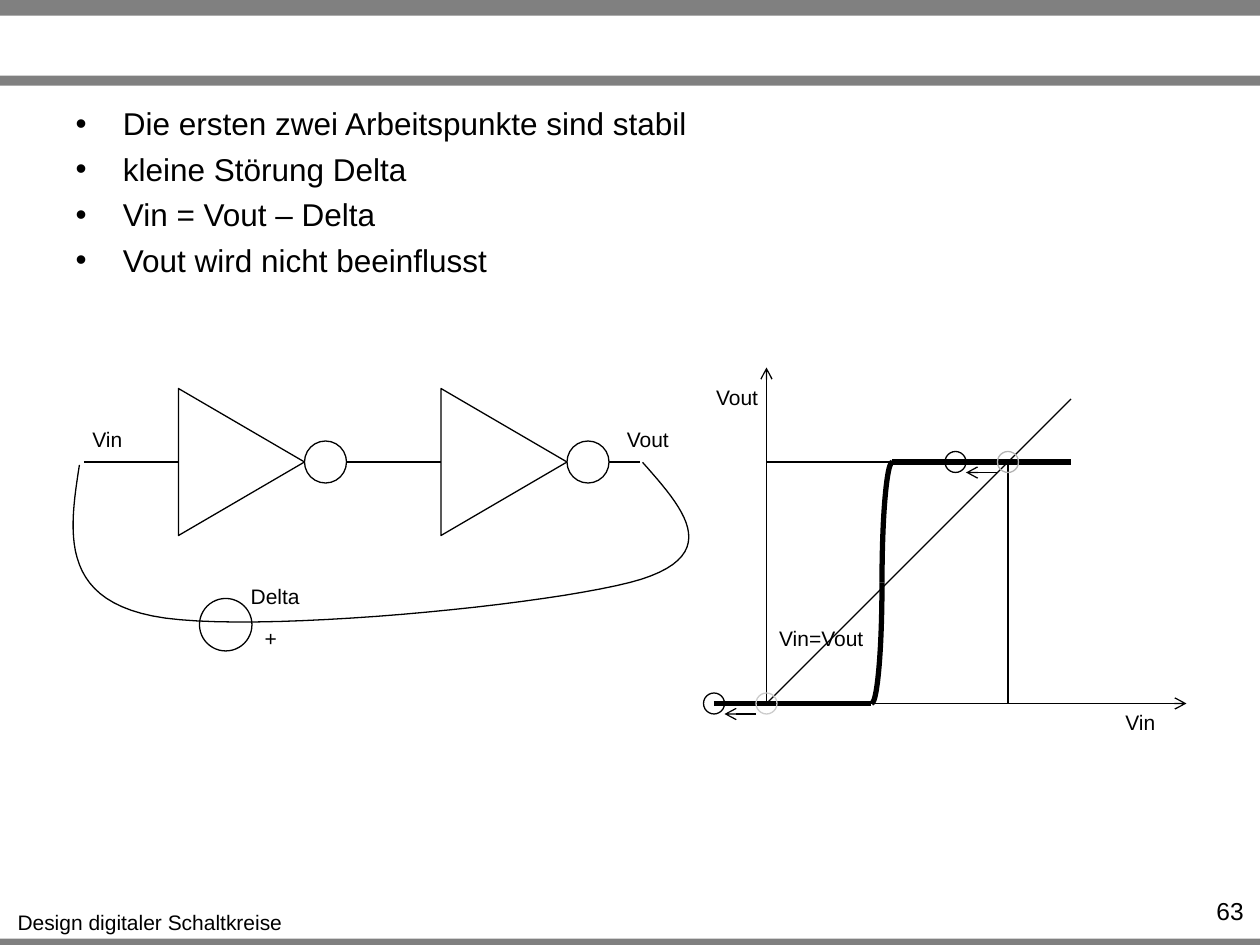
from typing import NamedTuple

from lxml import etree
from pptx import Presentation
from pptx.enum import shapes as kinds, text as txt
from pptx.dml.color import RGBColor
from pptx.oxml.ns import qn
from pptx.util import Pt

HUES = {"ink": "000000", "bar": "808080", "paper": "FFFFFF",
        "mid": "B3B3B3", "pale": "CCCCCC"}
FONT = "Arial"
THIN, THICK = 0.75, 3
HIGH, ZERO, AXIS = 264, 402, 438  # upper level, lower level, x of the Vout axis
GATES = (138, 288)


class Wire(NamedTuple):
    x1: float
    y1: float
    x2: float
    y2: float
    width: float = THIN
    arrow: bool = False


class Ring(NamedTuple):
    x: float
    y: float
    size: float
    hue: str = "ink"
    fill: str = ""


class Label(NamedTuple):
    words: str
    x: float
    y: float
    w: float
    h: float = 22
    size: float = 12
    align: txt.PP_ALIGN = txt.PP_ALIGN.CENTER
    wrap: bool = False


class Arc(NamedTuple):
    x: float
    start: float
    end: float


BARS = ((0, 9), (43.2, 5.7), (536.4, 3.6))
POINTS = ("Die ersten zwei Arbeitspunkte sind stabil", "kleine Störung Delta",
          "Vin = Vout – Delta", "Vout wird nicht beeinflusst")
LEADS = (
    Wire(48, HIGH, 102, HIGH),
    Wire(198, HIGH, 252, HIGH),
    Wire(348, HIGH, 366, HIGH),
)
PLOT = (
    Wire(AXIS, ZERO, 678, ZERO, arrow=True),
    Wire(AXIS, ZERO, AXIS, 210, arrow=True),
    Wire(408, ZERO, 498, ZERO, THICK),
    Wire(510, HIGH, 612, HIGH, THICK),
    Wire(AXIS, ZERO, 612, 228),
    Wire(AXIS, HIGH, 576, HIGH),
    Wire(576, HIGH, 576, ZERO),
    Wire(432, 408, 414, 408, arrow=True),
    Wire(570, 270, 552, 270, arrow=True),
)
ARCS = (Arc(504, 180, 270), Arc(492, 0, 90))
RINGS = (
    Ring(576, HIGH, 12, "mid"),
    Ring(AXIS, ZERO, 12, "pale"),
    Ring(129, 357, 30),
    Ring(408, ZERO, 12),
    Ring(546, HIGH, 12),
)
LABELS = (
    Label("Vin", 45.3, 240, 32),
    Label("Vout", 350.7, 240, 39),
    Label("Vin", 635.6, 402, 32),
    Label("Vout", 401.7, 216, 39),
    Label("Vin=Vout", 437.8, 354, 63),
    Label("Delta", 136, 330, 42.5),
    Label("+", 144, 354, 21.6),
    Label("Design digitaler Schaltkreise", 2.2, 516.2, 167),
    Label("63", 655.2, 508.3, 62.6, 17.3, 14, txt.PP_ALIGN.RIGHT, True),
)
LOOP = (
    ((367.2, 264.2), (390, 290), (413.3, 316), (366.5, 331)),
    ((366.5, 331), (319.7, 345.6), (141, 363), (87.1, 352)),
    ((87.1, 352), (33.8, 341.3), (39.6, 303), (45.4, 265.7)),
)


def hue(name: str) -> RGBColor:
    return RGBColor.from_string(HUES[name])


def style(shape, line: str = "", fill: str = "", width: float = THIN) -> None:
    shape.shadow.inherit = False
    if fill:
        shape.fill.solid()
        shape.fill.fore_color.rgb = hue(fill)
    else:
        shape.fill.background()
    if line:
        shape.line.color.rgb = hue(line)
        shape.line.width = Pt(width)
    else:
        shape.line.fill.background()


def add_shape(slide, kind, x: float, y: float, w: float, h: float):
    return slide.shapes.add_shape(kind, Pt(x), Pt(y), Pt(w), Pt(h))


def add_run(para, words: str, size: float) -> None:
    run = para.add_run()
    run.text = words
    run.font.name, run.font.size = FONT, Pt(size)
    run.font.color.rgb = hue("ink")


def draw_wire(slide, wire: Wire) -> None:
    ends = map(Pt, (wire.x1, wire.y1, wire.x2, wire.y2))
    link = slide.shapes.add_connector(kinds.MSO_CONNECTOR.STRAIGHT, *ends)
    link.line.color.rgb = hue("ink")
    link.line.width = Pt(wire.width)
    if wire.arrow:
        etree.SubElement(link.line._get_or_add_ln(), qn("a:tailEnd"), type="arrow")
    etree.SubElement(link._element.spPr, qn("a:effectLst"))


def draw_ring(slide, ring: Ring) -> None:
    half = ring.size / 2
    shape = add_shape(slide, kinds.MSO_SHAPE.OVAL, ring.x - half, ring.y - half,
                      ring.size, ring.size)
    style(shape, ring.hue, ring.fill)


def draw_gate(slide, x: float) -> None:
    """Draw an inverter: a triangle centred on x and its output bubble."""
    tri = add_shape(slide, kinds.MSO_SHAPE.ISOSCELES_TRIANGLE, x - 42, HIGH - 36, 84, 72)
    tri.rotation = 90
    style(tri, "ink")
    draw_ring(slide, Ring(x + 48, HIGH, 24, fill="paper"))


def draw_arc(slide, arc: Arc) -> None:
    shape = add_shape(slide, kinds.MSO_SHAPE.ARC, arc.x, HIGH, 12, ZERO - HIGH)
    for i, angle in enumerate((arc.start, arc.end)):
        shape.adjustments[i] = angle * 0.6  # 60000 units a degree, scaled by 100000
    style(shape, "ink", width=THICK)


def draw_loop(slide, steps: int = 24) -> None:
    """Draw the feedback wire along its cubic Bézier parts."""
    dots = []
    for part in LOOP:
        for t in (i / steps for i in range(1, steps + 1)):
            mix = ((1 - t) ** 3, 3 * t * (1 - t) ** 2, 3 * t * t * (1 - t), t ** 3)
            dots.append(tuple(Pt(sum(m * p[k] for m, p in zip(mix, part)))
                              for k in (0, 1)))
    x, y = LOOP[0][0]
    pen = slide.shapes.build_freeform(Pt(x), Pt(y))
    pen.add_line_segments(dots, close=False)
    style(pen.convert_to_shape(), "ink")


def draw_label(slide, label: Label) -> None:
    box = slide.shapes.add_textbox(*map(Pt, (label.x, label.y, label.w, label.h)))
    box.text_frame.word_wrap = label.wrap
    para = box.text_frame.paragraphs[0]
    para.alignment = label.align
    add_run(para, label.words, label.size)


def fill_body(body) -> None:
    body.left, body.top, body.width, body.height = map(Pt, (36, 54.7, 648, 53.3))
    frame = body.text_frame
    frame.auto_size = txt.MSO_AUTO_SIZE.NONE
    frame.vertical_anchor = txt.MSO_ANCHOR.TOP
    frame.margin_top = Pt(5)
    for i, words in enumerate(POINTS):
        para = frame.add_paragraph() if i else frame.paragraphs[0]
        props = para._p.get_or_add_pPr()
        props.set("marL", str(Pt(27)))
        props.set("indent", str(-Pt(27)))
        para.space_before = Pt(4.4 if i else 0)
        etree.SubElement(props, qn("a:buFont"), typeface=FONT)
        etree.SubElement(props, qn("a:buChar"), char="•")
        add_run(para, words, 18)


def main() -> None:
    deck = Presentation()
    deck.slide_width, deck.slide_height = Pt(720), Pt(540)
    slide = deck.slides.add_slide(deck.slide_layouts[1])
    title = slide.shapes.title._element
    title.getparent().remove(title)
    for y, h in BARS:
        style(add_shape(slide, kinds.MSO_SHAPE.RECTANGLE, 0, y, 720, h), fill="bar")
    fill_body(slide.placeholders[1])
    for x in GATES:
        draw_gate(slide, x)
    for draw, items in ((draw_wire, LEADS + PLOT), (draw_arc, ARCS),
                        (draw_ring, RINGS), (draw_label, LABELS)):
        for item in items:
            draw(slide, item)
    draw_loop(slide)
    deck.save("out.pptx")


if __name__ == "__main__":
    main()
